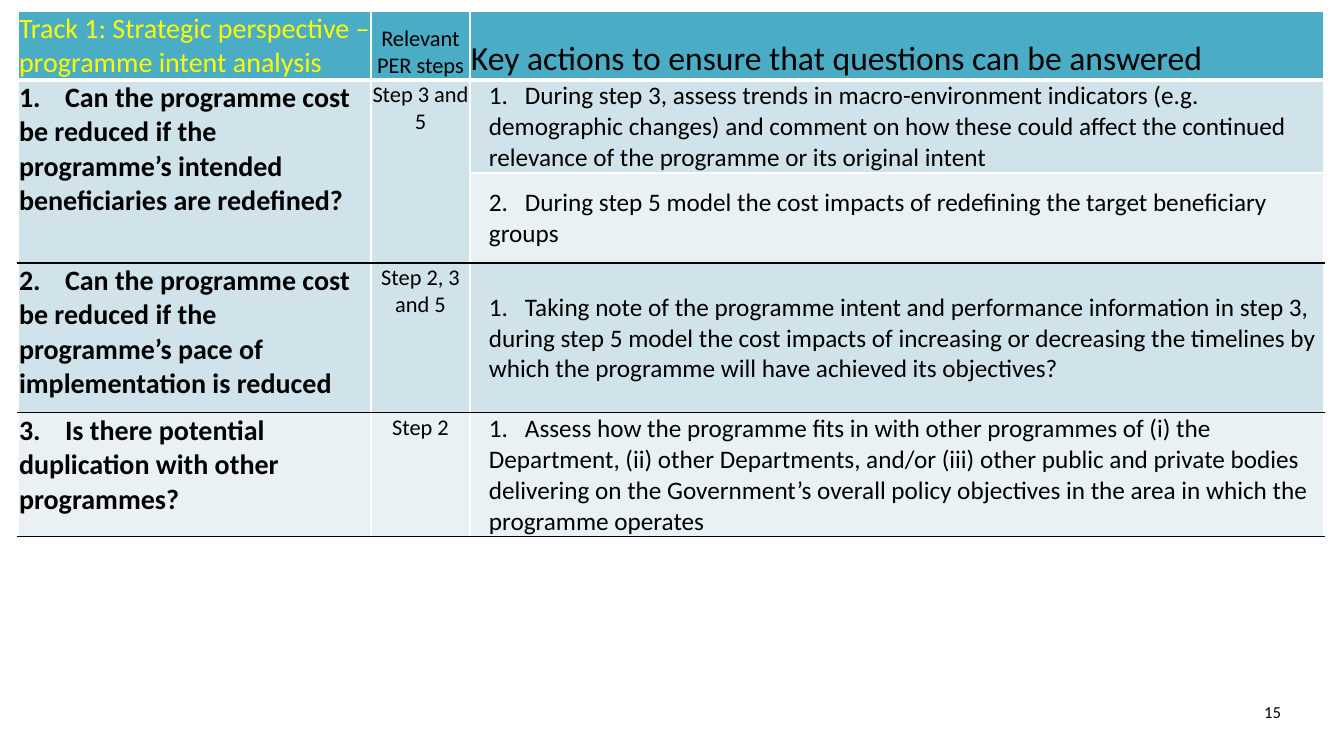
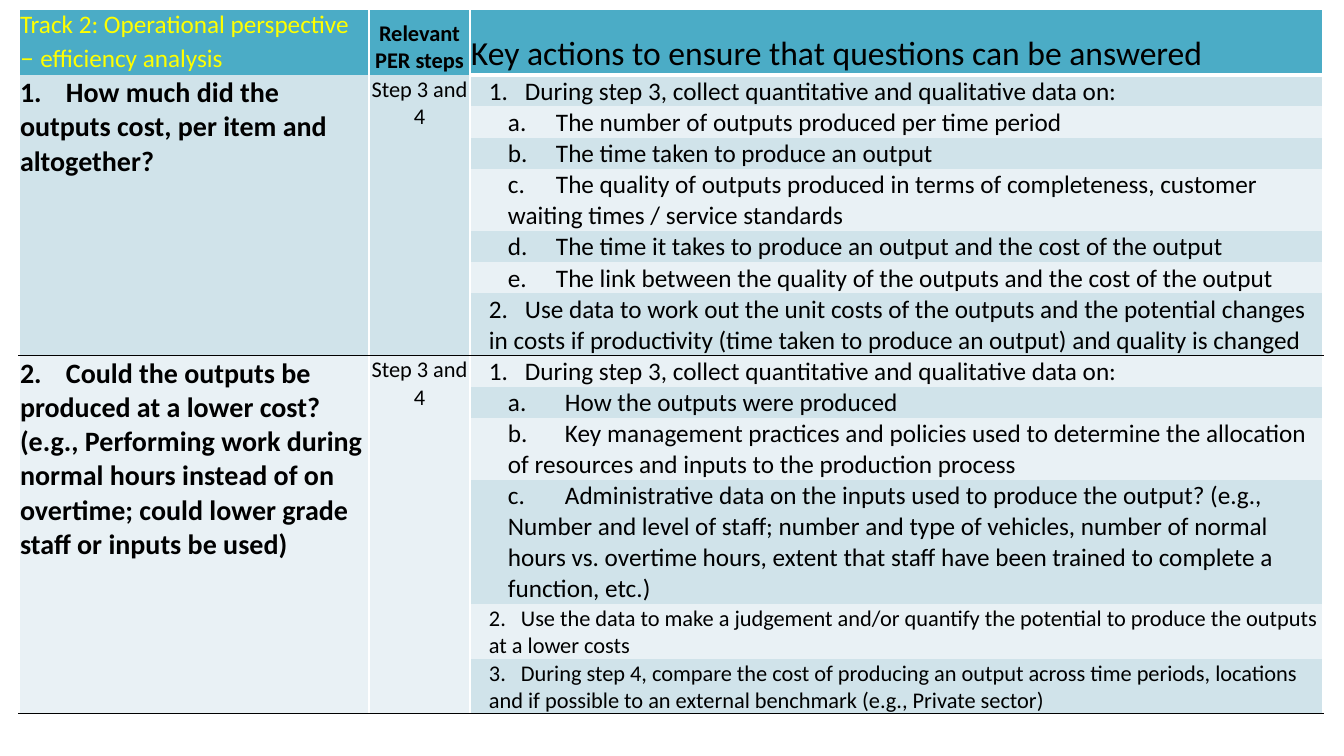
from lxml.etree import SubElement
from pptx import Presentation
from pptx.dml.color import RGBColor
from pptx.enum.text import MSO_ANCHOR, PP_ALIGN
from pptx.oxml.ns import qn
from pptx.util import Emu, Pt

COLORS = {
    "header": "4BACC6",
    "band_dark": "D0E3EA",
    "band_light": "E9F1F5",
    "title": "FFFF00",
    "text": "000000",
    "grid": "FFFFFF",
    "rule": "000000",
}
FONT = "Calibri"
GRID, HEAVY, RULE = ("grid", 1), ("grid", 3), ("rule", 1)

# kind of action: left inset (px), tab stop after the number (px), size (pt)
ACTIONS = {
    "point": (19, 36, 18),
    "small": (19, 32, 16),
    "sub": (38, 48, 18),
    "wide_sub": (38, 57, 18),
}
QUESTION_TAB = 46


def px(n):
    """Length in EMU; the slide is 1344 px wide at 100.8 px to the inch."""
    return Emu(round(n * 914400 / 100.8))


class Deck:
    def __init__(self):
        self.prs = Presentation()
        self.prs.slide_width, self.prs.slide_height = px(1344), px(756)
        self.s = None

    def slide(self):
        self.s = self.prs.slides.add_slide(self.prs.slide_layouts[6])

    def run(self, p, text, size, color="text", bold=False):
        r = p.add_run()
        r.text = text
        r.font.name = FONT
        r.font.size = Pt(size)
        r.font.bold = bold
        r.font.color.rgb = RGBColor.from_string(COLORS[color])

    def page_number(self, number):
        tf = self.s.shapes.add_textbox(px(1214), px(697), px(77), px(39)).text_frame
        tf.word_wrap = True
        p = tf.paragraphs[0]
        p.alignment = PP_ALIGN.RIGHT
        self.run(p, number, 12)

    def tab_stop(self, p, pos):
        tabs = SubElement(p._p.get_or_add_pPr(), qn("a:tabLst"))
        SubElement(tabs, qn("a:tab"), pos=str(px(pos)), algn="l")

    def paint(self, cell, fill, top, bottom):
        """Set the fill and the four borders; None means no line."""
        tcPr = cell._tc.get_or_add_tcPr()
        for tag, edge in (("lnL", GRID), ("lnR", GRID), ("lnT", top), ("lnB", bottom)):
            ln = SubElement(tcPr, qn(f"a:{tag}"))
            if edge is None:
                SubElement(ln, qn("a:noFill"))
                continue
            color, width = edge
            ln.set("w", str(Pt(width)))
            solid = SubElement(ln, qn("a:solidFill"))
            SubElement(solid, qn("a:srgbClr"), val=COLORS[color])
        cell.fill.solid()
        cell.fill.fore_color.rgb = RGBColor.from_string(COLORS[fill])

    def cell_text(self, cell, runs, anchor=MSO_ANCHOR.TOP, left=1, tab=None, center=False):
        """Fill a cell with runs given as (text, size, colour, bold)."""
        cell.margin_left, cell.margin_top = px(left), px(1)
        cell.margin_right, cell.margin_bottom = px(1), 0
        cell.vertical_anchor = anchor
        p = cell.text_frame.paragraphs[0]
        p.alignment = PP_ALIGN.CENTER if center else PP_ALIGN.LEFT
        if tab:
            self.tab_stop(p, tab)
        for run in runs:
            self.run(p, *run)

    def header(self, table, title, bold_steps, edges):
        labels = (
            [(text, size, "title") for text, size in title],
            [("Relevant PER steps", 16, "text", bold_steps)],
            [("Key actions to ensure that questions can be answered", 24)],
        )
        for col, (runs, edge) in enumerate(zip(labels, edges)):
            cell = table.cell(0, col)
            self.paint(cell, "header", GRID, edge)
            self.cell_text(cell, runs, MSO_ANCHOR.BOTTOM, center=col == 1)

    def group(self, table, first, content, tops, inner):
        """Add one question and its actions from row first; return the next row."""
        question, steps, actions = content
        last = first + len(actions) - 1
        bands = ("band_light", "band_dark")
        for row, (kind, text) in enumerate(actions, first):
            bottom = RULE if row == last else inner
            for col in range(3):
                top = tops[col] if row == first else inner if col == 2 else None
                edge = bottom if col == 2 else RULE if row in (first, last) else None
                band = bands[(row if col == 2 else first) % 2]
                self.paint(table.cell(row, col), band, top, edge)
            left, tab, size = ACTIONS[kind]
            self.cell_text(table.cell(row, 2), [(text, size)], MSO_ANCHOR.MIDDLE, left, tab)
        self.cell_text(table.cell(first, 0), [(question, 20, "text", True)], tab=QUESTION_TAB)
        self.cell_text(table.cell(first, 1), [(steps, 16)], center=True)
        if last > first:
            for col in (0, 1):
                table.cell(first, col).merge(table.cell(last, col))
        return last + 1

    def track(self, at, cols, rows, title, groups, bold_steps, header_edges, inner):
        frame = self.s.shapes.add_table(
            len(rows), len(cols), px(at[0]), px(at[1]), px(sum(cols)), px(sum(rows)))
        table = frame.table
        table.first_row = table.horz_banding = False
        for col, width in zip(table.columns, cols):
            col.width = px(width)
        for row, height in zip(table.rows, rows):
            row.height = px(height)
        self.header(table, title, bold_steps, header_edges)
        first, tops = 1, header_edges
        for content in groups:
            first = self.group(table, first, content, tops, inner)
            tops = (RULE,) * 3


STRATEGIC = [
    ("1.\tCan the programme cost be reduced if the programme’s intended beneficiaries "
     "are redefined?", "Step 3 and 5", [
         ("point", "1.\tDuring step 3, assess trends in macro-environment indicators (e.g. "
          "demographic changes) and comment on how these could affect the continued "
          "relevance of the programme or its original intent"),
         ("point", "2.\tDuring step 5 model the cost impacts of redefining the target "
          "beneficiary groups"),
     ]),
    ("2.\tCan the programme cost be reduced if the programme’s pace of implementation "
     "is reduced", "Step 2, 3 and 5", [
         ("point", "1.\tTaking note of the programme intent and performance information in "
          "step 3, during step 5 model the cost impacts of increasing or decreasing the "
          "timelines by which the programme will have achieved its objectives?"),
     ]),
    ("3.\tIs there potential duplication with other programmes?", "Step 2", [
        ("point", "1.\tAssess how the programme fits in with other programmes of (i) the "
         "Department, (ii) other Departments, and/or (iii) other public and private bodies "
         "delivering on the Government’s overall policy objectives in the area in which "
         "the programme operates"),
    ]),
]
COLLECT = ("point", "1.\tDuring step 3, collect quantitative and qualitative data on:")
OPERATIONAL = [
    ("1.\tHow much did the outputs cost, per item and altogether?", "Step 3 and 4", [
        COLLECT,
        ("sub", "a.\tThe number of outputs produced per time period"),
        ("sub", "b.\tThe time taken to produce an output"),
        ("sub", "c.\tThe quality of outputs produced in terms of completeness, customer "
         "waiting times / service standards"),
        ("sub", "d.\tThe time it takes to produce an output and the cost of the output"),
        ("sub", "e.\tThe link between the quality of the outputs and the cost of the output"),
        ("point", "2.\tUse data to work out the unit costs of the outputs and the potential "
         "changes in costs if productivity (time taken to produce an output) and quality "
         "is changed"),
    ]),
    ("2.\tCould the outputs be produced at a lower cost? (e.g., Performing work during "
     "normal hours instead of on overtime; could lower grade staff or inputs be used)",
     "Step 3 and 4", [
         COLLECT,
         ("wide_sub", "a.\tHow the outputs were produced"),
         ("wide_sub", "b.\tKey management practices and policies used to determine the "
          "allocation of resources and inputs to the production process"),
         ("wide_sub", "c.\tAdministrative data on the inputs used to produce the output? "
          "(e.g., Number and level of staff; number and type of vehicles, number of normal "
          "hours vs. overtime hours, extent that staff have been trained to complete a "
          "function, etc.)"),
         ("small", "2.\tUse the data to make a judgement and/or quantify the potential to "
          "produce the outputs at a lower costs"),
         ("small", "3.\tDuring step 4, compare the cost of producing an output across time "
          "periods, locations and if possible to an external benchmark (e.g., Private "
          "sector)"),
     ]),
]


def main():
    deck = Deck()

    deck.slide()
    deck.page_number("15")
    deck.track(
        (18, 11), (353, 99, 854), (69, 93, 90, 150, 124),
        [("Track 1: Strategic perspective – programme intent analysis", 20)],
        STRATEGIC, bold_steps=False, header_edges=(HEAVY,) * 3, inner=GRID)

    deck.slide()
    one, two, four, small = 31, 62, 124, 55
    deck.track(
        (19, 9), (350, 101, 853),
        (66, one, one, one, two, one, one, two, one, one, two, four, small, small),
        [("Track 2: Operational perspective ", 18), ("– ", 20), ("efficiency analysis", 18)],
        OPERATIONAL, bold_steps=True, header_edges=(None, None, HEAVY), inner=None)

    deck.prs.save("out.pptx")


if __name__ == "__main__":
    main()
